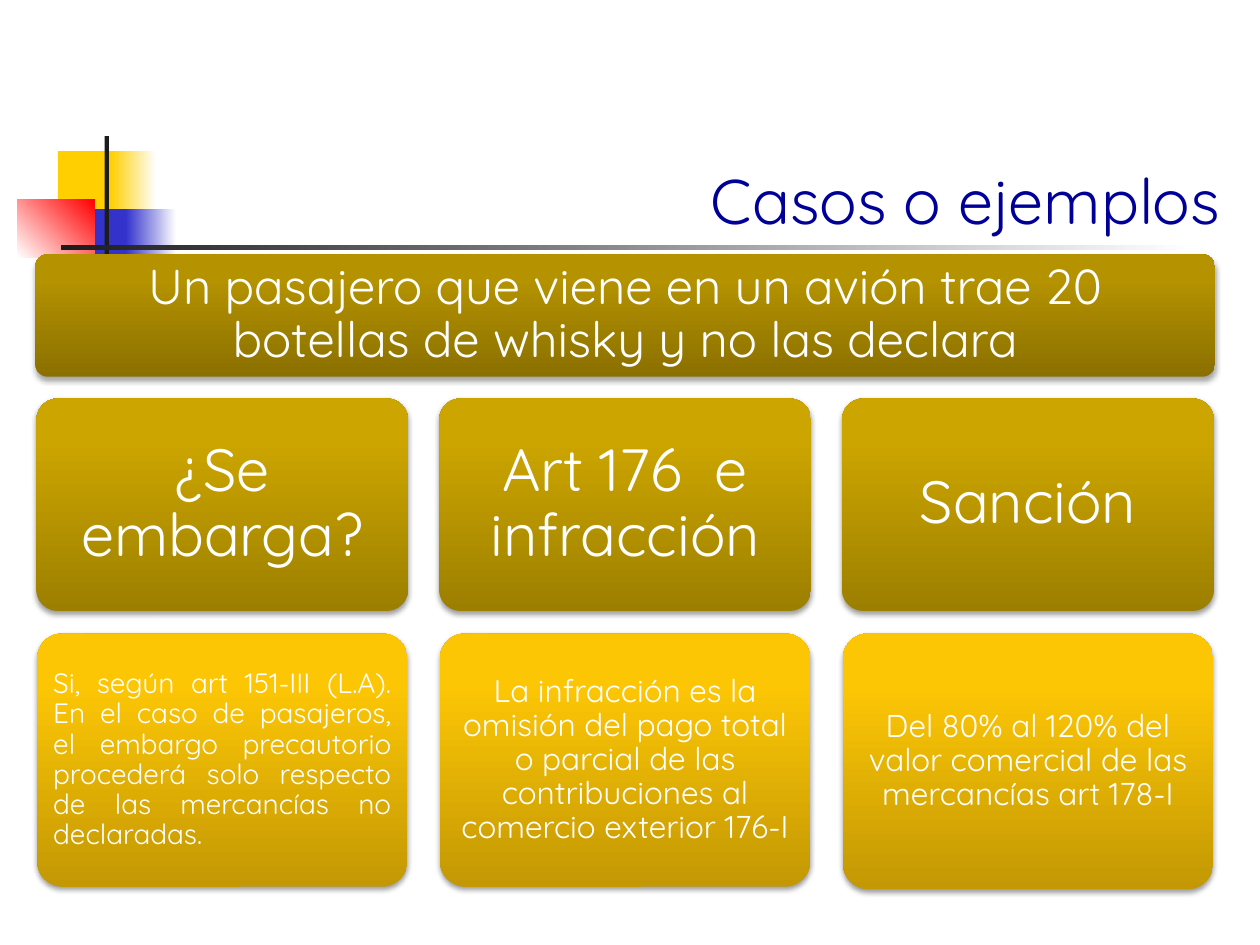
from lxml.etree import SubElement
from pptx import Presentation
from pptx.dml.color import RGBColor as Rgb
from pptx.enum.shapes import MSO_SHAPE as Shape
from pptx.enum.text import MSO_ANCHOR as Anchor, PP_ALIGN as Align
from pptx.oxml.ns import qn
from pptx.util import Pt

COLORS = {
    "yellow": "FFCF01", "blue": "3333CC", "red": "FF0000", "ink": "1C1C1C",
    "white": "FFFFFF", "title": "000099", "shadow": "000000",
}
CASE_FILL = [(0, "8B7000"), (80, "B49200"), (100, "B59200")]
TOPIC_FILL = [(0, "9D7F00"), (80, "CCA500"), (100, "CDA600")]
ANSWER_FILL = [(0, "C39804"), (80, "FDC605"), (100, "FFC804")]


class SlideBuilder:
    font = "Quicksand"
    upward = 90

    def __init__(self, slide):
        self.slide = slide

    def set_text(self, frame, text, size, color, align, anchor, margins, spacing=1.0):
        frame_format = {"word_wrap": True, "vertical_anchor": anchor}
        for side, margin in zip(("left", "top", "right", "bottom"), margins):
            frame_format[f"margin_{side}"] = Pt(margin)
        for name, value in frame_format.items():
            setattr(frame, name, value)
        paragraph = frame.paragraphs[0]
        paragraph.alignment = align
        paragraph.line_spacing = spacing
        run = paragraph.add_run()
        run.text = text
        for name, value in {"name": self.font, "size": Pt(size)}.items():
            setattr(run.font, name, value)
        run.font.color.rgb = Rgb.from_string(COLORS[color])

    def block(self, box, stops, angle=0, kind=Shape.RECTANGLE):
        shape = self.slide.shapes.add_shape(kind, *map(Pt, box))
        shape.shadow.inherit = False
        shape.line.fill.background()
        if len(stops) == 1:
            shape.fill.solid()
            shape.fill.fore_color.rgb = Rgb.from_string(stops[0][1])
            return shape
        shape.fill.gradient()
        shape.fill.gradient_angle = angle
        stop_list = next(shape.element.spPr.iter(qn("a:gsLst")))
        for old_stop in list(stop_list):
            stop_list.remove(old_stop)
        for position, color in stops:
            stop = SubElement(stop_list, qn("a:gs"), pos=str(position * 1000))
            SubElement(stop, qn("a:srgbClr"), val=color)
        return shape

    def card(self, box, stops, text, size, margin, align=Align.CENTER,
             opacity=38, distance=1.6):
        card = self.block(box, stops, self.upward, Shape.ROUNDED_RECTANGLE)
        card.adjustments[0] = 0.1
        effects = card.element.spPr.find(qn("a:effectLst"))
        shadow = SubElement(
            effects, qn("a:outerShdw"), blurRad=str(Pt(3.1)),
            dist=str(Pt(distance)), dir="5400000", rotWithShape="0")
        tint = SubElement(shadow, qn("a:srgbClr"), val=COLORS["shadow"])
        SubElement(tint, qn("a:alpha"), val=str(opacity * 1000))
        self.set_text(card.text_frame, text, size, "white", align,
                      Anchor.MIDDLE, [margin] * 4, 0.9)

    def title(self, box, text):
        title = self.slide.shapes.add_textbox(*map(Pt, box))
        self.set_text(title.text_frame, text, 36, "title", Align.RIGHT,
                      Anchor.BOTTOM, (7.2, 3.6, 7.2, 3.6))


def main():
    deck = Presentation()
    deck.slide_width, deck.slide_height = Pt(720), Pt(540)
    builder = SlideBuilder(deck.slides.add_slide(deck.slide_layouts[6]))

    ornaments = [
        ((33.1, 86.4, 34.6, 37.5), ["yellow"], 0),
        ((63.2, 86.4, 26, 37.5), ["yellow", "white"], 0),
        ((42.5, 119.5, 33.1, 37.5), ["blue"], 0),
        ((72, 119.5, 28.8, 37.5), ["blue", "white"], 0),
        ((10, 113.8, 44, 33.1), ["white", "red"], 45),
        ((59.8, 77.8, 2.5, 82.8), ["ink"], 0),
        ((34.6, 140.2, 648, 2.5), ["ink", "white"], 0),
    ]
    for box, names, angle in ornaments:
        stops = [(100 * i, COLORS[name]) for i, name in enumerate(names)]
        builder.block(box, stops, angle)

    builder.title((90.7, 49, 613.5, 90), "Casos o ejemplos")
    builder.card((20.2, 145.4, 674, 69.9), CASE_FILL,
                 "Un pasajero que viene en un avión trae 20 botellas de whisky "
                 "y no las declara", 28, 8.6, opacity=35, distance=1.8)

    columns = [
        ("¿Se embarga?",
         "Si, según art 151-III (L.A). En el caso de pasajeros, el embargo "
         "precautorio procederá solo respecto de las mercancías no declaradas.",
         16, Align.JUSTIFY, 144.7),
        ("Art 176  e infracción",
         "La infracción es la omisión del pago total o parcial de las "
         "contribuciones al comercio exterior 176-I",
         18, Align.CENTER, 144.7),
        ("Sanción",
         "Del 80% al 120% del valor comercial de las mercancías art 178-I",
         18, Align.CENTER, 146.2),
    ]
    for index, (topic, answer, size, align, height) in enumerate(columns):
        left = 20.8 + 230.2 * index
        builder.card((left, 227.7, 212.4, 121.5), TOPIC_FILL, topic, 34, 10)
        builder.card((left + 0.4, 362, 211.6, height), ANSWER_FILL,
                     answer, size, 5, align)

    deck.save("out.pptx")


if __name__ == "__main__":
    main()
